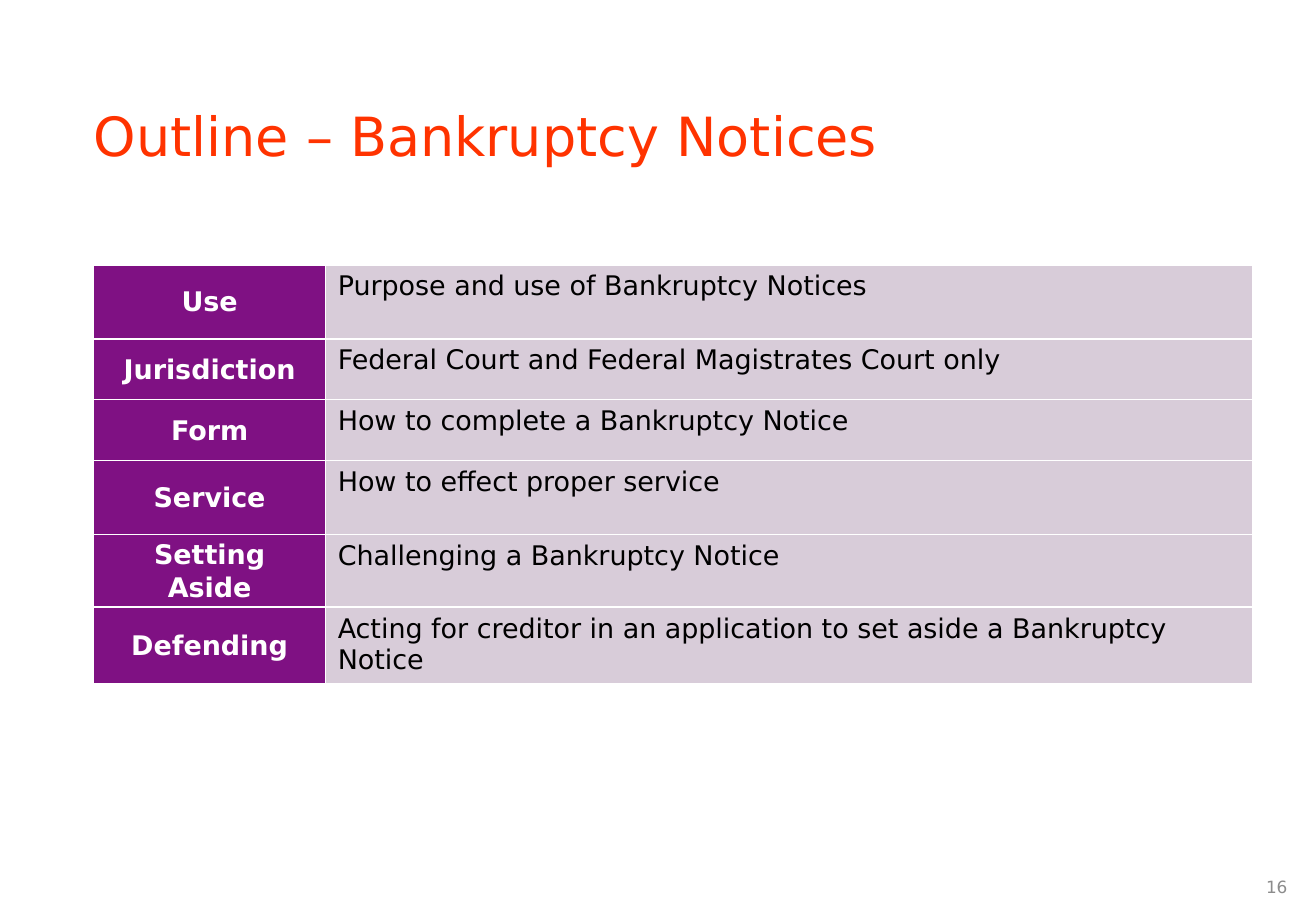
"""Build the outline slide on bankruptcy notices."""
import pptx
import pptx.dml.color
import pptx.enum.text
import pptx.oxml
import pptx.oxml.ns
import pptx.util

Inches = pptx.util.Inches
Pt = pptx.util.Pt
ANCHOR = pptx.enum.text.MSO_ANCHOR
ALIGN = pptx.enum.text.PP_ALIGN


def rgb(value):
    return pptx.dml.color.RGBColor.from_string(value)


def format_text(paragraph, size, color, bold=False):
    for name, value in {"name": "DejaVu Sans", "size": Pt(size), "bold": bold}.items():
        setattr(paragraph.font, name, value)
    paragraph.font.color.rgb = rgb(color)


deck = pptx.Presentation()
deck.slide_width, deck.slide_height = Inches(10.83), Inches(7.5)
slide = deck.slides.add_slide(deck.slide_layouts[5])

heading = slide.shapes.title
for name, value in {"left": 0.77, "top": 0.6, "width": 9.53, "height": 1.02}.items():
    setattr(heading, name, Inches(value))
heading_frame = heading.text_frame
heading_frame.text = "Outline – Bankruptcy Notices"
for side in ("left", "top", "right", "bottom"):
    setattr(heading_frame, f"margin_{side}", 0)
heading_frame.vertical_anchor = ANCHOR.MIDDLE
heading_frame.paragraphs[0].alignment = ALIGN.LEFT
format_text(heading_frame.paragraphs[0], 32, "FF3300")

page_number = slide.shapes.add_textbox(Inches(10.32), Inches(7.1), Inches(0.52), Inches(0.4))
page_number.text_frame.text = "16"
page_number.text_frame.word_wrap = True
page_number.text_frame.vertical_anchor = ANCHOR.MIDDLE
format_text(page_number.text_frame.paragraphs[0], 10, "8C8C8C")

topics = [
    ("Use", "Purpose and use of Bankruptcy Notices", 0.61),
    ("Jurisdiction", "Federal Court and Federal Magistrates Court only", 0.5),
    ("Form", "How to complete a Bankruptcy Notice", 0.5),
    ("Service", "How to effect proper service", 0.61),
    ("Setting Aside", "Challenging a Bankruptcy Notice", 0.58),
    ("Defending", "Acting for creditor in an application to set aside a Bankruptcy Notice", 0.61),
]
label_format = {
    "margin_left": Inches(0.16),
    "margin_right": Inches(0.16),
    "margin_top": Inches(0.02),
    "margin_bottom": Inches(0.02),
    "vertical_anchor": ANCHOR.MIDDLE,
}
outline = slide.shapes.add_table(
    len(topics), 2, Inches(0.77), Inches(2.18), Inches(9.54), Inches(3.41)
).table
outline.columns[0].width, outline.columns[1].width = Inches(1.91), Inches(7.63)

for row, (label, description, height) in enumerate(topics):
    outline.rows[row].height = Inches(height)
    label_cell, description_cell = outline.cell(row, 0), outline.cell(row, 1)
    for cell, text, fill, color in (
        (label_cell, label, "7F1183", "FFFFFF"),
        (description_cell, description, "D8CCD9", "000000"),
    ):
        cell.text = text
        format_text(cell.text_frame.paragraphs[0], 16, color, cell is label_cell)
        properties = cell._tc.get_or_add_tcPr()
        for edge in ("lnL", "lnR", "lnT", "lnB"):
            properties.append(pptx.oxml.parse_xml(
                f'<a:{edge} {pptx.oxml.ns.nsdecls("a")} w="12700"><a:solidFill>'
                f'<a:srgbClr val="FFFFFF"/></a:solidFill></a:{edge}>'
            ))
        cell.fill.solid()
        cell.fill.fore_color.rgb = rgb(fill)
    for name, value in label_format.items():
        setattr(label_cell, name, value)
    label_cell.text_frame.paragraphs[0].alignment = ALIGN.CENTER
    label_cell.text_frame.paragraphs[0].line_spacing = 1.05

deck.save("out.pptx")
